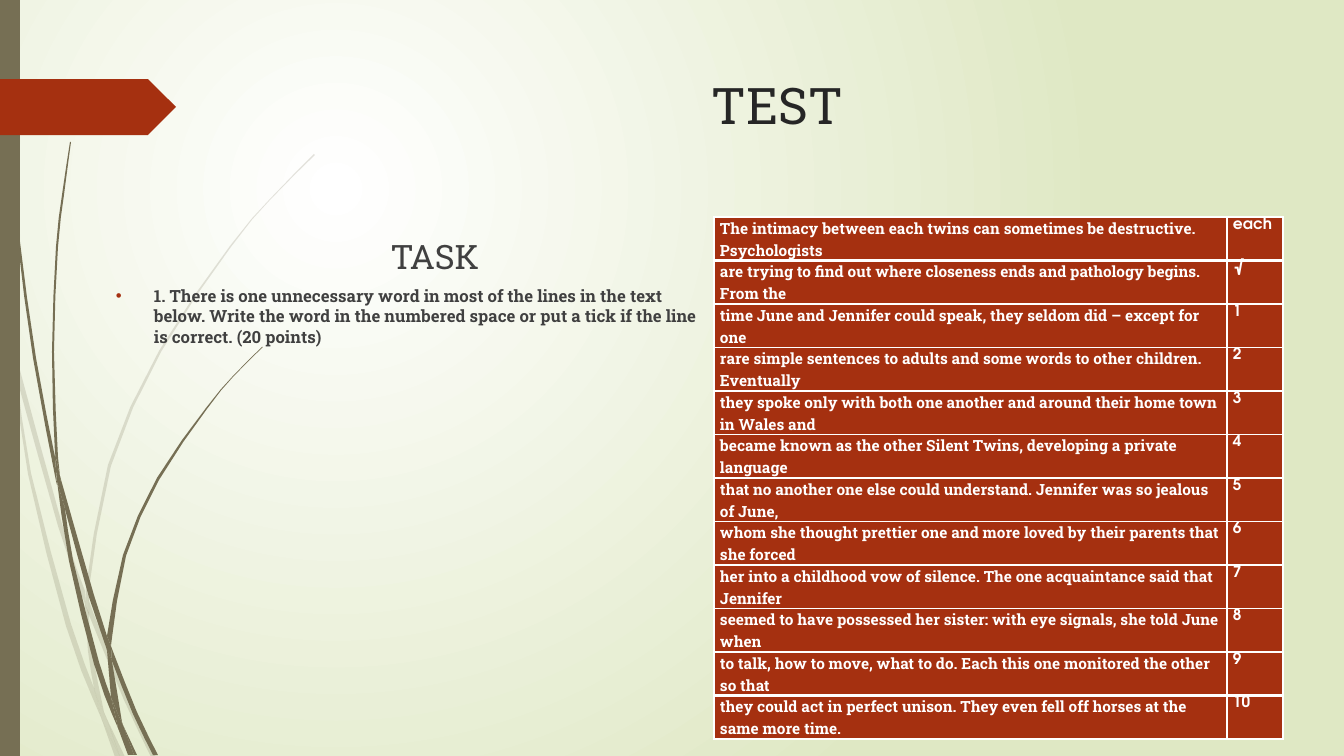
import math
import pptx
import pptx.util
import pptx.dml.color
import pptx.enum.shapes
import pptx.enum.text
import pptx.oxml
import pptx.oxml.ns

PX = 914400 / 100.8
COLORS = {
    "olive": "766F54", "rust": "A53010", "white": "FFFFFF", "sage": "DFE8C4",
    "title": "262626", "body": "404040",
}
SLAB = "Roboto Slab"
GOTHIC = "TeX Gyre Adventor"
TASK = (
    "1. There is one unnecessary word in most of the lines in the text below. "
    "Write the word in the numbered space or put a tick if the line is correct. (20 points)"
)
LINES = [
    "The intimacy between each twins can sometimes be destructive. Psychologists",
    "are trying to find out where closeness ends and pathology begins. From the",
    "time June and Jennifer could speak, they seldom did – except for one",
    "rare simple sentences to adults and some words to other children. Eventually",
    "they spoke only with both one another and around their home town in Wales and",
    "became known as the other Silent Twins, developing a private language",
    "that no another one else could understand. Jennifer was so jealous of June,",
    "whom she thought prettier one and more loved by their parents that she forced",
    "her into a childhood vow of silence. The one acquaintance said that Jennifer",
    "seemed to have possessed her sister: with eye signals, she told June when",
    "to talk, how to move, what to do. Each this one monitored the other so that",
    "they could act in perfect unison. They even fell off horses at the same more time.",
]
ANSWERS = ["each", "√"] + [str(number) for number in range(1, 11)]
PALE_BLADES = [
    ([(0, 284), (9, 325), (11, 353)], [(10, 347), (0, 301)]),
    ([(14, 348), (62, 524), (85, 591)], [(85, 604), (58, 526), (17, 379)]),
    ([(89, 601), (93, 612), (128, 698), (156, 757)], [(151, 757), (124, 700), (89, 615)]),
    ([(106, 717), (125, 757)], [(120, 757)]),
    ([(11, 353), (17, 379), (31, 473), (71, 624), (94, 688), (100, 713)],
     [(102, 720), (93, 699), (66, 626), (28, 474), (11, 353)]),
    ([(85, 604), (89, 613), (89, 615), (92, 651), (104, 712), (106, 717)],
     [(97, 698), (94, 688), (88, 651), (85, 604)]),
    ([(86, 591), (86, 589), (108, 465), (159, 351), (230, 246), (270, 199), (314, 154)],
     [(315, 155), (270, 200), (231, 247), (161, 352), (111, 466), (89, 589), (89, 601)]),
    ([(102, 720), (120, 757)], [(115, 757)]),
    ([(86, 591), (89, 601), (89, 615)], [(85, 604)]),
    ([(94, 688), (97, 698), (106, 717), (120, 757)], [(102, 720), (100, 713)]),
]
DARK_BLADES = [
    ([(3, 0), (5, 48), (7, 111), (17, 235), (33, 358), (56, 481), (57, 485)],
     [(55, 457), (36, 358), (19, 234), (8, 110), (5, 48), (4, 0)]),
    ([(60, 476), (94, 595), (107, 636), (107, 650)], [(89, 597), (65, 509), (60, 476)]),
    ([(111, 646), (114, 654), (137, 712), (158, 755)], [(153, 755), (133, 714), (112, 661)]),
    ([(57, 481), (65, 509), (73, 560), (99, 662), (111, 697), (117, 723), (118, 728)],
     [(112, 714), (94, 664), (69, 561), (57, 481)]),
    ([(70, 142), (62, 195), (56, 247), (52, 352), (55, 453), (60, 476)],
     [(58, 457), (54, 352), (58, 247), (64, 195), (71, 142)]),
    ([(123, 725), (137, 755)], [(134, 755)]),
    ([(55, 453), (60, 476), (65, 509)], [(57, 481), (55, 457)]),
    ([(107, 636), (123, 555), (157, 478), (206, 408), (233, 376), (262, 347)],
     [(263, 347), (233, 377), (207, 409), (159, 480), (126, 556), (112, 638), (111, 646)]),
    ([(118, 728), (132, 755)], [(128, 755)]),
    ([(107, 650), (110, 656), (112, 661), (122, 722), (123, 725)], [(117, 712), (111, 697)]),
    ([(107, 636), (111, 646), (112, 661)], [(110, 656), (107, 650)]),
    ([(111, 697), (117, 712), (123, 725), (134, 755)], [(131, 755), (118, 728), (117, 723)]),
]


def emu(px):
    """Turn px into EMU."""
    return round(px * PX)


def rgb(name):
    """Look up a named colour."""
    return pptx.dml.color.RGBColor.from_string(COLORS[name])


def paint_background(page):
    """Fill the page with a radial gradient."""
    fill = page.background.fill
    fill.gradient()
    for stop, name in zip(fill.gradient_stops, ("white", "sage")):
        stop.color.rgb = rgb(name)
    gradient = page._element.find(".//" + pptx.oxml.ns.qn("a:gradFill"))
    gradient.remove(gradient.find(pptx.oxml.ns.qn("a:lin")))
    gradient.append(pptx.oxml.parse_xml(
        f'<a:path {pptx.oxml.ns.nsdecls("a")} path="circle">'
        '<a:fillToRect l="50000" t="50000" r="100000" b="100000"/></a:path>'))


def paint_shape(shape, color, alpha=100):
    """Give a shape a plain fill without line or shadow."""
    shape.shadow.inherit = False
    shape.fill.solid()
    shape.fill.fore_color.rgb = rgb(color)
    shape.line.fill.background()
    if alpha < 100:
        swatch = shape._element.spPr.find(".//" + pptx.oxml.ns.qn("a:srgbClr"))
        swatch.append(pptx.oxml.parse_xml(
            f'<a:alpha {pptx.oxml.ns.nsdecls("a")} val="{alpha * 1000}"/>'))


def add_block(page, kind, box, color):
    """Add a filled preset shape."""
    paint_shape(page.shapes.add_shape(kind, *map(emu, box)), color)


def bend_edge(knots):
    """Add a spline midpoint to each long step of an edge."""
    padded = [knots[0], *knots, knots[-1]]
    edge = [knots[0]]
    for a, b, c, d in zip(padded, padded[1:], padded[2:], padded[3:]):
        if math.dist(b, c) > 30:
            edge.append([(9 * (q + r) - p - s) / 16 for p, q, r, s in zip(a, b, c, d)])
        edge.append(c)
    return edge


def add_blade(page, edges, alpha=100):
    """Add a piece of grass between two edges."""
    outline = [(emu(x), emu(y)) for edge in edges for x, y in bend_edge(edge)]
    builder = page.shapes.build_freeform(*outline[0], scale=1.0)
    builder.add_line_segments(outline[1:], close=True)
    paint_shape(builder.convert_to_shape(), "olive", alpha)


def write_text(frame, text, size, color, font=SLAB, bold=False, align=None, spacing=None):
    """Write one formatted paragraph and return it."""
    frame.word_wrap = True
    para = frame.paragraphs[0]
    para.alignment = align
    para.line_spacing = spacing
    span = para.add_run()
    span.text = text
    span.font.size = pptx.util.Pt(size)
    span.font.name = font
    span.font.bold = bold
    span.font.color.rgb = rgb(color)
    return para


def add_text(page, box, text, anchor="TOP", bullet=False, **style):
    """Add a text box, with a hanging bullet if asked."""
    frame = page.shapes.add_textbox(*map(emu, box)).text_frame
    frame.vertical_anchor = pptx.enum.text.MSO_ANCHOR[anchor]
    para = write_text(frame, text, **style)
    if bullet:
        properties = para._p.get_or_add_pPr()
        properties.set("marL", str(emu(38)))
        properties.set("indent", str(-emu(38)))
        names = pptx.oxml.ns.nsdecls("a")
        for xml in (f'<a:buClr {names}><a:srgbClr val="{COLORS["rust"]}"/></a:buClr>',
                    f'<a:buFont {names} typeface="Arial"/>',
                    f'<a:buChar {names} char="•"/>'):
            properties.append(pptx.oxml.parse_xml(xml))


def format_cell(cell, text, font, borders):
    """Fill, border and write one table cell."""
    cell.margin_left = cell.margin_right = emu(6)
    cell.margin_top = cell.margin_bottom = 0
    cell.fill.solid()
    cell.fill.fore_color.rgb = rgb("rust")
    write_text(cell.text_frame, text, 11, "white", font=font, bold=True, spacing=1.07)
    properties = cell._tc.get_or_add_tcPr()
    for index, (side, points) in enumerate(borders.items()):
        properties.insert(index, pptx.oxml.parse_xml(
            f'<a:ln{side} {pptx.oxml.ns.nsdecls("a")} w="{points * 12700}"><a:solidFill>'
            f'<a:srgbClr val="{COLORS["white"]}"/></a:solidFill></a:ln{side}>'))


def add_test_table(page):
    """Add the text lines with their answer column."""
    last = len(LINES) - 1
    table = page.shapes.add_table(len(LINES), 2, *map(emu, (714, 217, 569, 522))).table
    table.first_row = table.horz_banding = False
    for column, width in zip(table.columns, (513, 56)):
        column.width = emu(width)
    for index, texts in enumerate(zip(LINES, ANSWERS)):
        borders = {"L": 1, "R": 1, "T": 3 if index in (1, last) else 1,
                   "B": 3 if index in (0, last - 1) else 1}
        for column, (text, font) in enumerate(zip(texts, (SLAB, GOTHIC))):
            format_cell(table.cell(index, column), text, font, borders)


def main():
    """Build the test slide."""
    deck = pptx.Presentation()
    deck.slide_width, deck.slide_height = emu(1344), emu(756)
    page = deck.slides.add_slide(deck.slide_layouts[6])
    paint_background(page)
    for blades, alpha in ((PALE_BLADES, 20), (DARK_BLADES, 100)):
        for edges in blades:
            add_blade(page, edges, alpha)
    kinds = pptx.enum.shapes.MSO_SHAPE
    add_block(page, kinds.RECTANGLE, (0, 0, 20, 756), "olive")
    add_block(page, kinds.PENTAGON, (0, 79, 176, 56), "rust")
    center = pptx.enum.text.PP_ALIGN.CENTER
    add_text(page, (286, 69, 983, 141), "TEST", size=36, color="title", align=center)
    add_text(page, (106, 218, 658, 63), "TASK", anchor="BOTTOM", size=24, color="body",
             align=center)
    add_text(page, (106, 281, 608, 370), TASK, bullet=True, size=12, color="body",
             bold=True, spacing=1.0)
    add_test_table(page)
    deck.save("out.pptx")


if __name__ == "__main__":
    main()
